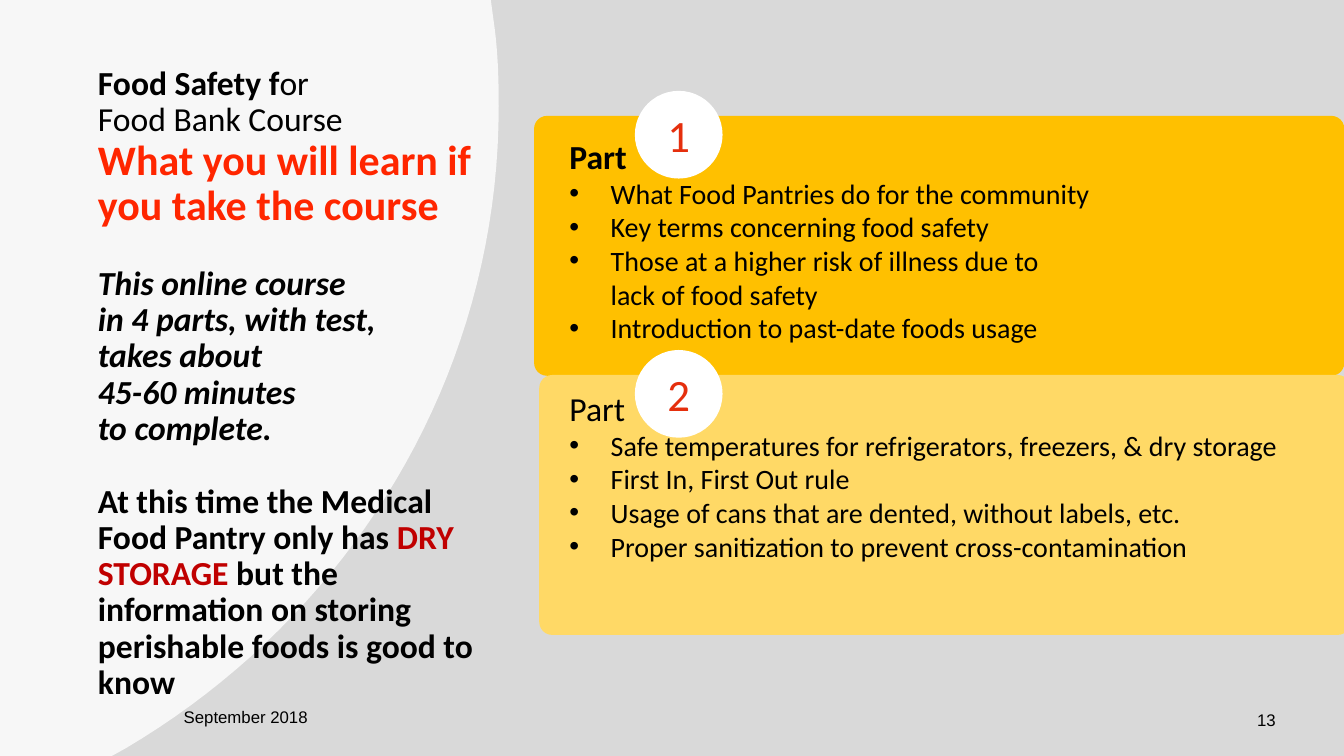
from lxml import etree
from pptx import Presentation
from pptx.dml.color import RGBColor
from pptx.enum.shapes import MSO_SHAPE
from pptx.enum.text import MSO_ANCHOR, PP_ALIGN
from pptx.oxml.ns import qn
from pptx.util import Cm, Pt

RECTANGLE = MSO_SHAPE.RECTANGLE
ROUNDED = MSO_SHAPE.ROUNDED_RECTANGLE
OVAL = MSO_SHAPE.OVAL
TOP, MIDDLE = MSO_ANCHOR.TOP, MSO_ANCHOR.MIDDLE
CENTER = PP_ALIGN.CENTER

BLACK, WHITE, GREY = "000000", "FFFFFF", "D9D9D9"
AMBER, PALE_AMBER = "FFC000", "FFD966"
BRIGHT_RED, DARK_RED, NUMBER_RED = "FF2600", "C00000", "E52F0D"
WIDTH, HEIGHT = 33.87, 19.05
INSET, BULLET_INDENT = 0.13, 1.04

PARTS = [
    (True, ["What Food Pantries do for the community",
            "Key terms concerning food safety",
            "Those at a higher risk of illness due to\nlack of food safety",
            "Introduction to past-date foods usage"]),
    (False, ["Safe temperatures for refrigerators, freezers, & dry storage",
             "First In, First Out rule",
             "Usage of cans that are dented, without labels, etc.",
             "Proper sanitization to prevent cross-contamination"]),
]


def rgb(color):
    return RGBColor.from_string(color)


def paint(shape, color):
    shape.shadow.inherit = False
    shape.fill.solid()
    shape.fill.fore_color.rgb = rgb(color)
    shape.line.fill.background()


def add_block(shapes, kind, left, top, width, height, color):
    block = shapes.add_shape(kind, Cm(left), Cm(top), Cm(width), Cm(height))
    paint(block, color)
    return block


def add_panel(page, left, top, width, color):
    panel = add_block(page.shapes, ROUNDED, left, top, width, 6.55, color)
    panel.adjustments[0] = 0.05


def add_box(shapes, left, top, width, height, anchor=TOP, wrap=True):
    """Add an empty text box and return its text frame."""
    box = shapes.add_textbox(Cm(left), Cm(top), Cm(width), Cm(height))
    frame = box.text_frame
    frame.word_wrap = wrap
    frame.vertical_anchor = anchor
    frame.margin_left = frame.margin_right = Cm(INSET)
    frame.margin_top = frame.margin_bottom = Cm(INSET)
    return frame


def add_para(frame, space_before=0, line_spacing=1.0):
    """Add a paragraph, using the frame's first one while it is unused."""
    first = frame.paragraphs[0]
    para = frame.add_paragraph() if first.runs else first
    para.space_before = Pt(space_before)
    para.line_spacing = line_spacing
    return para


def add_span(para, text, size, color=BLACK, bold=False, italic=False, font="Calibri"):
    """Add text in one style; each newline becomes a line break."""
    for index, line in enumerate(text.split("\n")):
        if index:
            para.add_line_break()
        span = para.add_run()
        span.text = line
        span.font.name = font
        span.font.size = Pt(size)
        span.font.bold = bold
        span.font.italic = italic
        span.font.color.rgb = rgb(color)


def set_bullet(para):
    properties = para._p.get_or_add_pPr()
    properties.set("marL", str(Cm(BULLET_INDENT)))
    properties.set("indent", str(-Cm(BULLET_INDENT)))
    etree.SubElement(properties, qn("a:buFont")).set("typeface", "Arial")
    etree.SubElement(properties, qn("a:buChar")).set("char", "•")


def curve_points(start, control_1, control_2, end, steps=40):
    """Sample a cubic Bezier curve, leaving out its start."""
    points = []
    for step in range(1, steps + 1):
        t = step / steps
        weights = ((1 - t) ** 3, 3 * t * (1 - t) ** 2, 3 * t * t * (1 - t), t ** 3)
        corners = (start, control_1, control_2, end)
        points.append(tuple(sum(weight * corner[axis] for weight, corner in zip(weights, corners))
                            for axis in (0, 1)))
    return points


def add_arc_backdrop(page):
    shoulder, widest, foot = (12.47, 0.74), (12.57, 2.67), (3.18, 18.85)
    outline = [(12.37, 0), shoulder]
    outline += curve_points(shoulder, (12.55, 1.37), (12.57, 2.03), widest)
    outline += curve_points(widest, (12.57, 9.53), (8.81, 15.52), foot)
    outline += [(2.82, HEIGHT), (-0.1, HEIGHT)]
    builder = page.shapes.build_freeform(Cm(-0.1), Cm(0))
    builder.add_line_segments([(Cm(x), Cm(y)) for x, y in outline], close=True)
    backdrop = builder.convert_to_shape()
    paint(backdrop, WHITE)
    fill_color = backdrop._element.spPr.find(qn("a:solidFill"))[0]
    etree.SubElement(fill_color, qn("a:alpha")).set("val", "80000")


def add_parts(page):
    frame = add_box(page.shapes, 14.22, 3.4, 19.61, 12.29)
    for index, (bold, topics) in enumerate(PARTS):
        heading = add_para(frame, 34 if index else 0, 0.9)
        add_span(heading, "Part", 24, bold=bold)
        for topic in topics:
            para = add_para(frame)
            set_bullet(para)
            add_span(para, topic, 20)


def add_badge(page, number, top):
    left = 16
    shapes = page.shapes.add_group_shape().shapes
    add_block(shapes, OVAL, left, top, 2.21, 2.21, WHITE)
    para = add_para(add_box(shapes, left + 0.33, top + 0.43, 1.55, 1.32, MIDDLE))
    para.alignment = CENTER
    add_span(para, str(number), 32, NUMBER_RED)


def add_course_text(page):
    frame = add_box(page.shapes, 2.34, 1.55, 9.91, 13.92)
    para = add_para(frame, line_spacing=0.9)
    add_span(para, "Food Safety f", 24, bold=True)
    add_span(para, "or\nFood Bank Course", 24)
    para = add_para(frame, line_spacing=0.9)
    add_span(para, "What you will learn if\nyou take the course", 30, BRIGHT_RED, bold=True)
    para = add_para(frame, 26, 0.9)
    add_span(para, "This online course\nin 4 parts, with test,\ntakes about\n"
                   "45-60 minutes\nto complete.", 24, bold=True, italic=True)
    para = add_para(frame, 26, 0.9)
    add_span(para, "At this time the Medical Food Pantry only has ", 24, bold=True)
    add_span(para, "DRY STORAGE ", 24, DARK_RED, bold=True)
    add_span(para, "but the information on storing perishable foods is good to know",
             24, bold=True)


def add_footer(page, text, left, top, width, anchor=TOP, wrap=True):
    frame = add_box(page.shapes, left, top, width, 0.74, anchor, wrap)
    add_span(add_para(frame), text, 12, font="Arial")


def main():
    deck = Presentation()
    deck.slide_width, deck.slide_height = Cm(WIDTH), Cm(HEIGHT)
    page = deck.slides.add_slide(deck.slide_layouts[6])
    add_block(page.shapes, RECTANGLE, 0, 0, WIDTH, HEIGHT, GREY)
    add_panel(page, 13.46, 2.92, 20.42, AMBER)
    add_panel(page, 13.59, 9.45, 20.45, PALE_AMBER)
    add_parts(page)
    add_arc_backdrop(page)
    add_footer(page, "13", 31.55, 17.78, 0.76, MIDDLE, wrap=False)
    add_footer(page, "September 2018", 4.5, 17.68, 4.9)
    add_course_text(page)
    for index in range(len(PARTS)):
        add_badge(page, index + 1, 2.29 + index * 6.53)
    deck.save("out.pptx")


if __name__ == "__main__":
    main()
